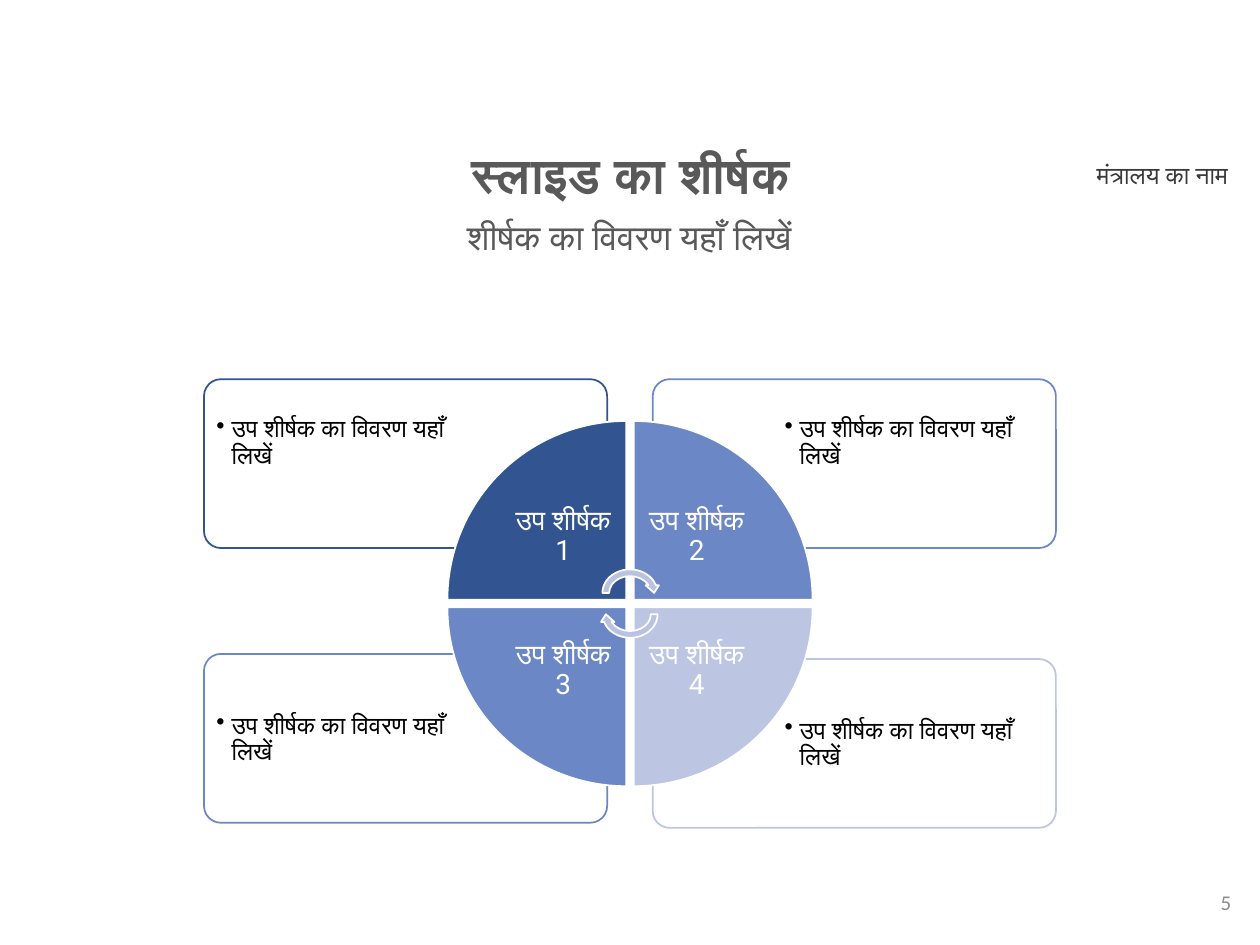
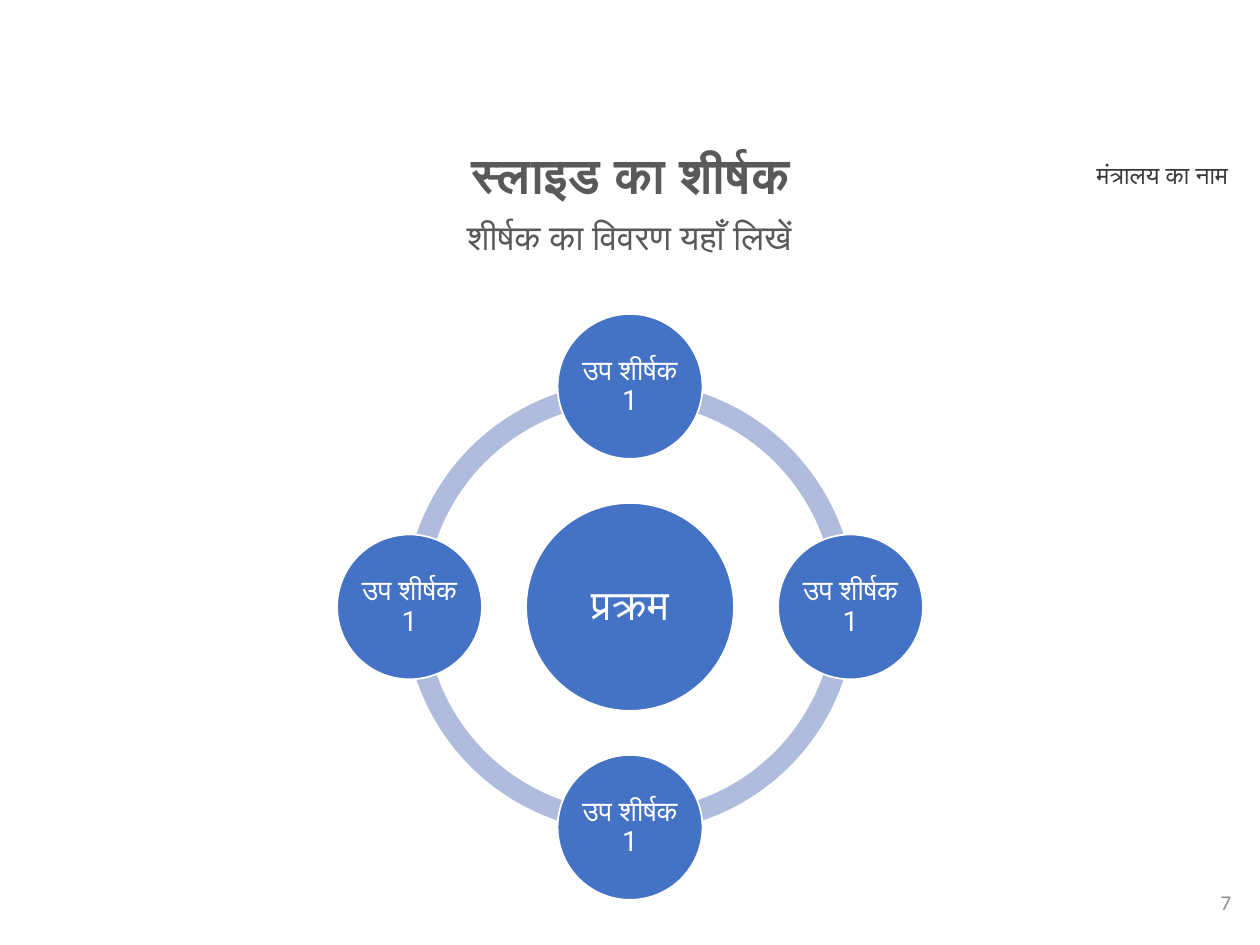
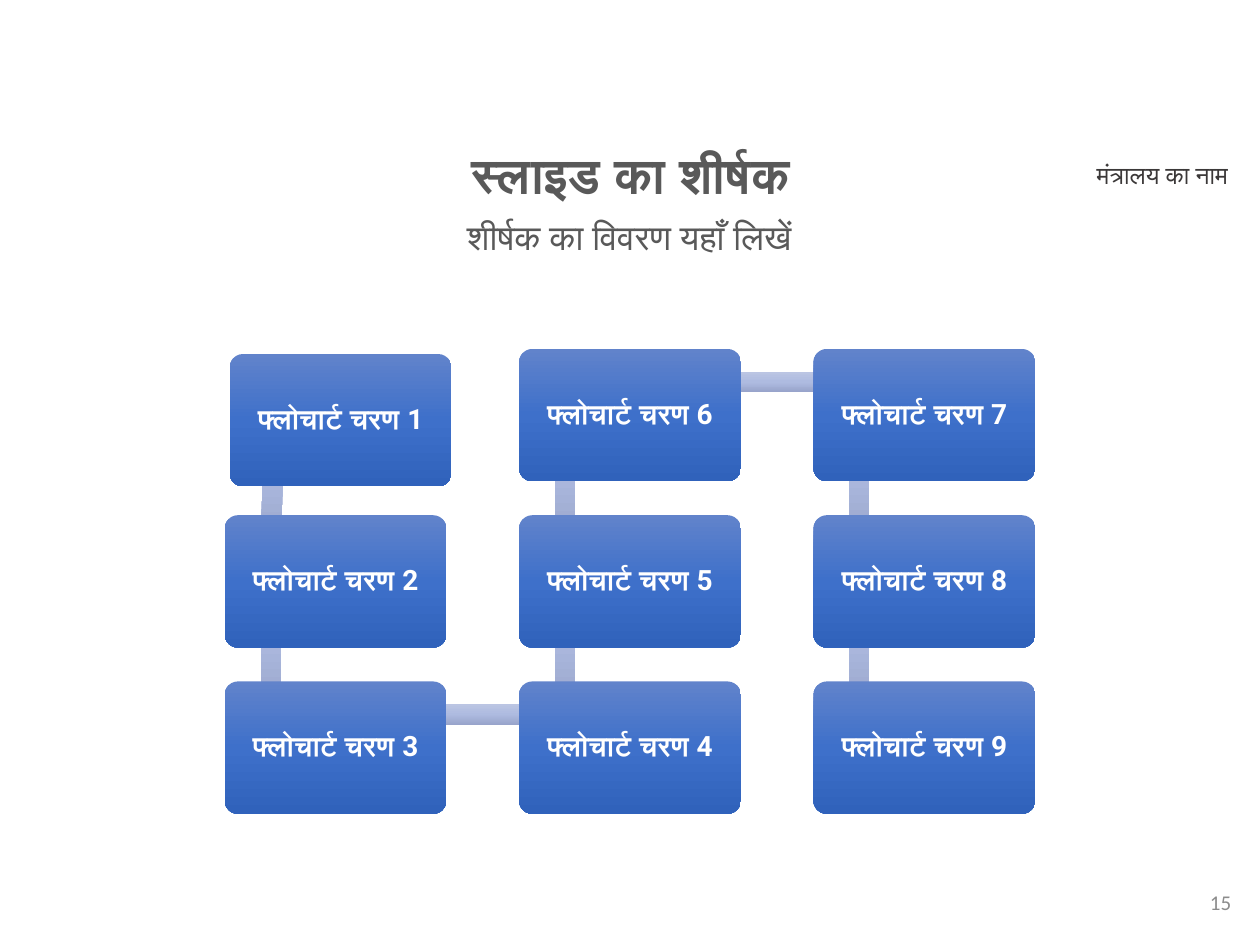
import math
from itertools import pairwise

from lxml import etree
from pptx import Presentation
from pptx.dml.color import RGBColor
from pptx.enum.shapes import MSO_SHAPE
from pptx.enum.text import MSO_ANCHOR, PP_ALIGN
from pptx.oxml.ns import qn
from pptx.util import Pt

TOP, MIDDLE = MSO_ANCHOR.TOP, MSO_ANCHOR.MIDDLE
LEFT, CENTER, RIGHT = PP_ALIGN.LEFT, PP_ALIGN.CENTER, PP_ALIGN.RIGHT
RECTANGLE, ROUNDED = MSO_SHAPE.RECTANGLE, MSO_SHAPE.ROUNDED_RECTANGLE
OVAL, ARC = MSO_SHAPE.OVAL, MSO_SHAPE.BLOCK_ARC
WEDGE, TURN_ARROW = MSO_SHAPE.PIE_WEDGE, MSO_SHAPE.CIRCULAR_ARROW

WHITE = RGBColor(0xFF, 0xFF, 0xFF)
BLACK = RGBColor(0x00, 0x00, 0x00)
TITLE_GREY = RGBColor(0x59, 0x59, 0x59)
MINISTRY_GREY = RGBColor(0x3B, 0x38, 0x38)
NUMBER_GREY = RGBColor(0x8C, 0x8C, 0x8C)
NAVY = RGBColor(0x32, 0x54, 0x91)
MID_BLUE = RGBColor(0x6C, 0x87, 0xC5)
PALE_BLUE = RGBColor(0xBC, 0xC6, 0xE2)
ARROW_BLUE = RGBColor(0xB9, 0xC2, 0xE1)
BLUE = RGBColor(0x44, 0x72, 0xC4)
RING_BLUE = RGBColor(0xB0, 0xBC, 0xDE)
STEP_GRADIENT = [RGBColor(0x61, 0x83, 0xCB), RGBColor(0x3E, 0x70, 0xCA), RGBColor(0x30, 0x62, 0xBB)]
BAR_GRADIENT = [RGBColor(0xBB, 0xC5, 0xE3), RGBColor(0xAE, 0xBB, 0xE0), RGBColor(0x98, 0xA4, 0xCB)]

HEADING_FONT, DIAGRAM_FONT = "Calibri", "Roboto"
BOX_INSETS = (7.2, 3.6, 7.2, 3.6)
DETAIL = "उप शीर्षक का विवरण यहाँ लिखें"


def write(shape, text, size, color, font=DIAGRAM_FONT, bold=False, align=CENTER,
          anchor=MIDDLE, insets=BOX_INSETS, spacing=0.9, bullet_indent=None):
    frame = shape.text_frame
    frame.word_wrap = True
    frame.vertical_anchor = anchor
    frame.margin_left, frame.margin_top, frame.margin_right, frame.margin_bottom = map(Pt, insets)
    paragraph = frame.paragraphs[0]
    paragraph.alignment = align
    paragraph.line_spacing = spacing
    if bullet_indent:
        properties = paragraph._p.get_or_add_pPr()
        properties.set("marL", str(Pt(bullet_indent)))
        properties.set("indent", str(-Pt(bullet_indent)))
        etree.SubElement(properties, qn("a:buChar")).set("char", "•")
    run = paragraph.add_run()
    run.text = text
    run.font.name, run.font.size, run.font.bold = font, Pt(size), bold
    run.font.color.rgb = color


def add_text(slide, box, *args, **options):
    write(slide.shapes.add_textbox(*map(Pt, box)), *args, **options)


def add_shape(slide, kind, box, fill=None, line=None, rotation=0, adjustments=()):
    shape = slide.shapes.add_shape(kind, *map(Pt, box))
    shape.shadow.inherit = False
    shape.rotation = rotation
    for index, value in enumerate(adjustments):
        shape.adjustments[index] = value
    if fill is not None:
        shape.fill.solid()
        shape.fill.fore_color.rgb = fill
    if line is None:
        shape.line.fill.background()
    else:
        shape.line.color.rgb = line
        shape.line.width = Pt(1)
    return shape


def fill_downward(shape, colors):
    """Fill with a top-to-bottom gradient that ignores the shape's rotation."""
    gradient = etree.Element(qn("a:gradFill"), rotWithShape="0")
    stops = etree.SubElement(gradient, qn("a:gsLst"))
    for index, color in enumerate(colors):
        stop = etree.SubElement(stops, qn("a:gs"), pos=str(index * 50000))
        etree.SubElement(stop, qn("a:srgbClr"), val=str(color))
    etree.SubElement(gradient, qn("a:lin"), ang="5400000", scaled="0")
    shape._element.spPr.find(qn("a:prstGeom")).addnext(gradient)


def square(center_x, center_y, side):
    return center_x - side / 2, center_y - side / 2, side, side


def add_frame(slide, number):
    """Add the ministry name, title, subtitle and slide number."""
    add_text(slide, (605.5, 87.8, 117.4, 24.5), "मंत्रालय का नाम", 14, MINISTRY_GREY,
             HEADING_FONT, anchor=TOP, spacing=1.0)
    add_text(slide, (548.6, 501.1, 162, 28.8), str(number), 12, NUMBER_GREY,
             HEADING_FONT, align=RIGHT, spacing=1.0)
    add_text(slide, (105.1, 122.4, 509, 45.4), "शीर्षक का विवरण यहाँ लिखें", 20, TITLE_GREY,
             HEADING_FONT, anchor=TOP)
    add_text(slide, (133.9, 82.8, 452.9, 33.8), "स्लाइड का शीर्षक", 28, TITLE_GREY,
             HEADING_FONT, bold=True, anchor=TOP)


def add_detail_card(slide, box, color, is_right, is_lower):
    card = add_shape(slide, ROUNDED, box, WHITE, color, adjustments=[0.1])
    near, far = 4.3, 72.5
    left, right = (far, near) if is_right else (near, far)
    top, bottom = (31, 4) if is_lower else (4, 27.5)
    write(card, DETAIL, 14, BLACK, align=LEFT, anchor=TOP if is_lower else MIDDLE,
          insets=(left, top, right, bottom), bullet_indent=8.64)


def add_cycle_matrix(slide, box):
    """Four cards at the corners of the box, a divided disc at its centre."""
    left, top, width, height = box
    center_x, center_y = left + width / 2, top + height / 2
    card_width, card_height = 230.4, 96.5
    wedge, half_gap, label = 102.2, 2.15, 72
    quadrants = [  # column, row, rotation, colour, card lift
        (0, 0, 0, NAVY, 0),
        (1, 0, 90, MID_BLUE, 0),
        (0, 1, 270, MID_BLUE, 2.9),
        (1, 1, 180, PALE_BLUE, 0),
    ]
    for column, row, _, color, lift in quadrants:
        card_box = (left + column * (width - card_width),
                    top + row * (height - card_height) - lift, card_width, card_height)
        add_detail_card(slide, card_box, color, column, row)

    def from_center(column, row, side):
        return (center_x + (half_gap if column else -half_gap - side),
                center_y + (half_gap if row else -half_gap - side), side, side)

    for number, (column, row, rotation, color, _) in enumerate(quadrants, 1):
        add_shape(slide, WEDGE, from_center(column, row, wedge), color, WHITE, rotation)
        add_text(slide, from_center(column, row, label), f"उप शीर्षक {number}", 16, WHITE,
                 insets=(8.6,) * 4)
    arrow_width, arrow_height = 35.3, 30.7
    for offset, rotation in ((-6.1, 0), (6.1, 180)):
        arrow_box = (center_x - arrow_width / 2, center_y + offset - arrow_height / 2,
                     arrow_width, arrow_height)
        add_shape(slide, TURN_ARROW, arrow_box, ARROW_BLUE, WHITE, rotation)


def add_radial_cycle(slide, box):
    """A hub and four circles on a ring, filling a square box."""
    left, top, width, height = box
    center_x, center_y = left + width / 2, top + height / 2
    satellite, hub, ring = 82.8, 118.8, 257.8
    orbit = (width - satellite) / 2
    quarter = 54  # a quarter turn in adjustment units
    for index in range(4):
        add_shape(slide, ARC, square(center_x, center_y, ring), RING_BLUE,
                  adjustments=[index * quarter, (index + 1) % 4 * quarter, 0.046])
    circles = [(0, 0, hub, "प्रक्रम", 24)]
    circles += [(x, y, satellite, "उप शीर्षक 1", 16) for x, y in ((0, -1), (1, 0), (0, 1), (-1, 0))]
    for x, y, diameter, text, size in circles:
        circle = add_shape(slide, OVAL, square(center_x + x * orbit, center_y + y * orbit, diameter),
                           BLUE, WHITE)
        write(circle, text, size, WHITE, insets=(1.5,) * 4)


def add_snake_flow(slide, box):
    """Nine steps running down, up and down through three columns."""
    left, top, width, height = box
    step_width, step_height, bar_thickness = 126.7, 75.6, 11.5
    anchor_x, anchor_y = 26.2, 18.9
    column_pitch, row_pitch = (width - step_width) / 2, (height - step_height) / 2
    corners = []
    for index in range(9):
        column, row = divmod(index, 3)
        if column == 1:
            row = 2 - row
        nudge = 2.9 if index == 0 else 0
        corners.append((left + column * column_pitch + nudge, top + row * row_pitch + nudge))
    for (x1, y1), (x2, y2) in pairwise(corners):
        length = math.hypot(x2 - x1, y2 - y1)
        bar_box = ((x1 + x2 - length) / 2 + anchor_x,
                   (y1 + y2 - bar_thickness) / 2 + anchor_y, length, bar_thickness)
        angle = math.degrees(math.atan2(y2 - y1, x2 - x1)) % 360
        fill_downward(add_shape(slide, RECTANGLE, bar_box, rotation=angle), BAR_GRADIENT)
    for number, (x, y) in enumerate(corners, 1):
        step = add_shape(slide, ROUNDED, (x, y, step_width, step_height), adjustments=[0.1])
        fill_downward(step, STEP_GRADIENT)
        write(step, f"फ्लोचार्ट चरण {number}", 16, WHITE, bold=True, insets=(5,) * 4)


def main():
    presentation = Presentation()
    presentation.slide_width, presentation.slide_height = Pt(720), Pt(540)
    pages = [
        (5, add_cycle_matrix, (116.6, 216.7, 486.8, 256.4)),
        (7, add_radial_cycle, (192.6, 179.4, 334.8, 334.8)),
        (15, add_snake_flow, (128.4, 199.4, 463.2, 265.6)),
    ]
    for number, add_diagram, box in pages:
        slide = presentation.slides.add_slide(presentation.slide_layouts[6])
        add_diagram(slide, box)
        add_frame(slide, number)
    presentation.save("out.pptx")


if __name__ == "__main__":
    main()
